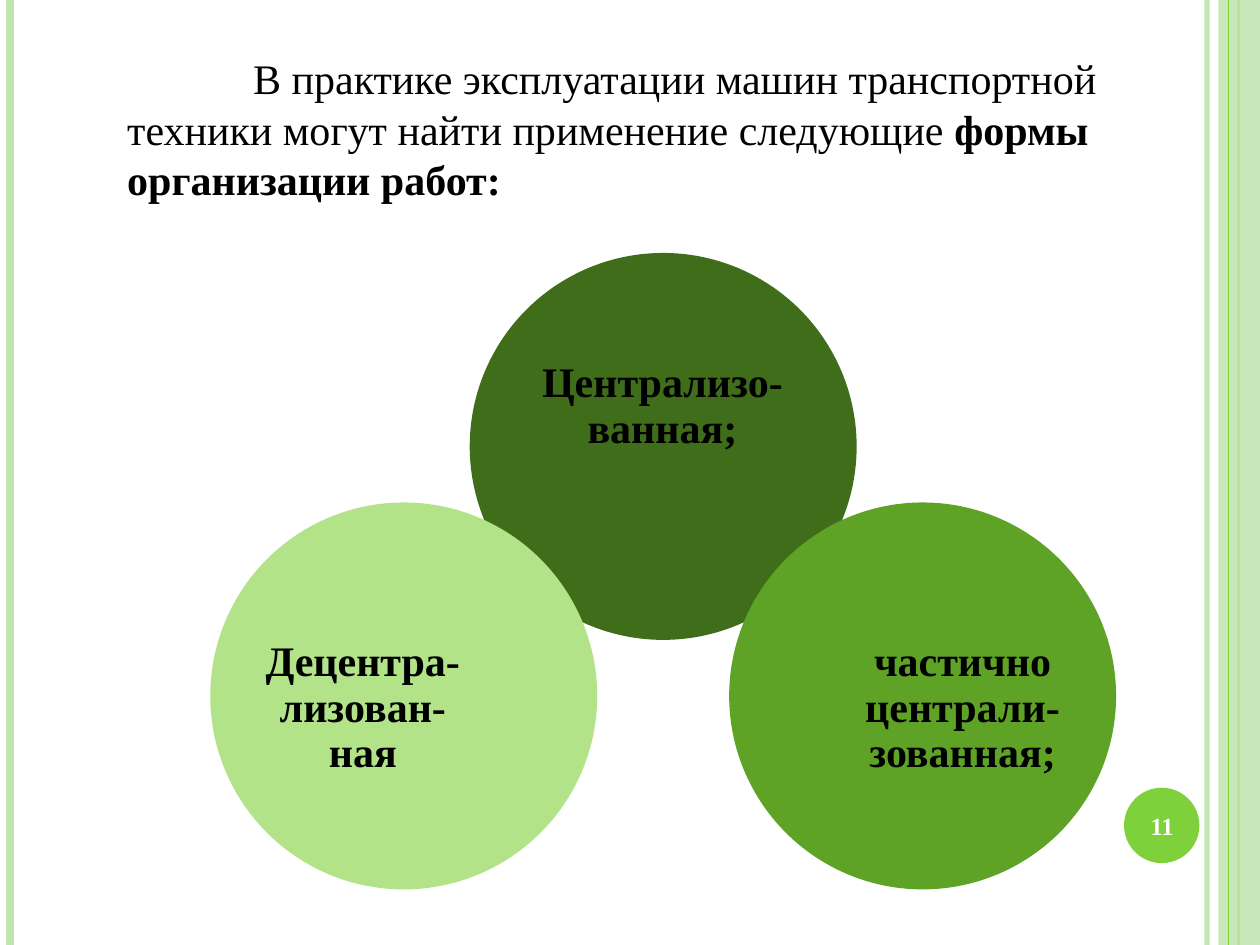
from dataclasses import dataclass

import pptx
import pptx.dml.color
import pptx.enum.shapes
import pptx.enum.text
import pptx.oxml.ns
import pptx.util
from lxml import etree

Cm = pptx.util.Cm
Pt = pptx.util.Pt
RGBColor = pptx.dml.color.RGBColor
MSO_SHAPE = pptx.enum.shapes.MSO_SHAPE
MSO_ANCHOR = pptx.enum.text.MSO_ANCHOR
PP_ALIGN = pptx.enum.text.PP_ALIGN
qn = pptx.oxml.ns.qn

BLACK = RGBColor(0x00, 0x00, 0x00)
WHITE = RGBColor(0xFF, 0xFF, 0xFF)
PALE_GREEN = RGBColor(0xC0, 0xE5, 0xAF)
ACCENT_GREEN = RGBColor(0x7F, 0xD1, 0x3B)
DARK_GREEN = RGBColor(0x3F, 0x6D, 0x19)
MID_GREEN = RGBColor(0x5F, 0xA3, 0x26)
LIGHT_GREEN = RGBColor(0xB2, 0xE3, 0x89)

FONT = "Times New Roman"
SLIDE_WIDTH, SLIDE_HEIGHT = 25.4, 19.05
CIRCLE_SIZE = 7.8


@dataclass
class Stripe:
    x: float
    width: float
    color: RGBColor
    opacity: int = 100


@dataclass
class Box:
    left: float
    top: float
    width: float
    height: float


@dataclass
class WorkForm:
    text: str
    color: RGBColor
    left: float
    top: float
    label: Box


# Stripes beneath and above the translucent right band
LOWER_STRIPES = [
    Stripe(24.33, 3, PALE_GREEN, 93),
    Stripe(0.2, 4.5, PALE_GREEN),
    Stripe(24.97, 1.5, ACCENT_GREEN),
]
UPPER_STRIPE = Stripe(24.76, 0.75, ACCENT_GREEN)

WORK_FORMS = [
    WorkForm("Централизо-ванная;", DARK_GREEN, 9.47, 5.1, Box(10.5, 6.45, 5.71, 3.5)),
    WorkForm("частично централи-зованная;", MID_GREEN, 14.7, 10.13,
             Box(17.07, 12.14, 4.67, 4.29)),
    WorkForm("Децентра-лизован-ная", LIGHT_GREEN, 4.24, 10.13,
             Box(4.98, 12.14, 4.67, 4.29)),
]


def set_opacity(fill_parent, percent: int) -> None:
    color = fill_parent.find(qn("a:solidFill"))[0]
    etree.SubElement(color, qn("a:alpha"), val=str(percent * 1000))


def add_stripe(shapes, stripe: Stripe) -> None:
    connector = shapes.add_connector(
        pptx.enum.shapes.MSO_CONNECTOR.STRAIGHT,
        Cm(stripe.x), Cm(0), Cm(stripe.x), Cm(SLIDE_HEIGHT))
    connector.line.color.rgb = stripe.color
    connector.line.width = Pt(stripe.width)
    properties = connector.element.spPr
    etree.SubElement(properties, qn("a:effectLst"))
    if stripe.opacity < 100:
        set_opacity(properties.find(qn("a:ln")), stripe.opacity)


def add_filled(shapes, kind: MSO_SHAPE, box: Box, color: RGBColor):
    shape = shapes.add_shape(
        kind, Cm(box.left), Cm(box.top), Cm(box.width), Cm(box.height))
    shape.fill.solid()
    shape.fill.fore_color.rgb = color
    shape.line.fill.background()
    shape.shadow.inherit = False
    return shape


def add_label(shapes, box: Box, text: str, size: int, color: RGBColor):
    label = shapes.add_textbox(
        Cm(box.left), Cm(box.top), Cm(box.width), Cm(box.height))
    frame = label.text_frame
    frame.word_wrap = True
    frame.vertical_anchor = MSO_ANCHOR.MIDDLE
    paragraph = frame.paragraphs[0]
    paragraph.text = text
    paragraph.alignment = PP_ALIGN.CENTER
    paragraph.font.name = FONT
    paragraph.font.size = Pt(size)
    paragraph.font.bold = True
    paragraph.font.color.rgb = color
    return label


def add_work_form(shapes, form: WorkForm) -> None:
    circle = Box(form.left, form.top, CIRCLE_SIZE, CIRCLE_SIZE)
    add_filled(shapes, MSO_SHAPE.OVAL, circle, form.color)
    frame = add_label(shapes, form.label, form.text, 24, BLACK).text_frame
    frame.margin_left = frame.margin_right = 0
    frame.margin_top = frame.margin_bottom = 0
    frame.paragraphs[0].line_spacing = 0.9


def fill_body(body) -> None:
    body.left, body.top = Cm(1.55), Cm(0.94)
    body.width, body.height = Cm(21.67), Cm(5.69)
    frame = body.text_frame
    frame.auto_size = pptx.enum.text.MSO_AUTO_SIZE.NONE
    paragraph = frame.paragraphs[0]
    paragraph.space_before = Pt(6)
    paragraph.font.name = FONT
    paragraph.font.size = Pt(24)
    paragraph.font.color.rgb = BLACK
    paragraph.add_run().text = (
        "В практике эксплуатации машин транспортной техники "
        "могут найти применение следующие ")
    forms = paragraph.add_run()
    forms.text = "формы организации работ:"
    forms.font.bold = True
    # Indented first line without a bullet
    properties = paragraph._p.get_or_add_pPr()
    properties.set("marL", str(Cm(0.76)))
    properties.set("indent", str(Cm(2.54)))
    bullet = etree.Element(qn("a:buNone"))
    properties.find(qn("a:spcBef")).addnext(bullet)


def main() -> None:
    presentation = pptx.Presentation()
    presentation.slide_width = Cm(SLIDE_WIDTH)
    presentation.slide_height = Cm(SLIDE_HEIGHT)
    slide = presentation.slides.add_slide(presentation.slide_layouts[1])
    shapes = slide.shapes
    title = shapes.title.element
    title.getparent().remove(title)

    # Side decoration
    for stripe in LOWER_STRIPES:
        add_stripe(shapes, stripe)
    band = add_filled(shapes, MSO_SHAPE.RECTANGLE,
                      Box(24.56, 0, 0.84, SLIDE_HEIGHT), PALE_GREEN)
    set_opacity(band.element.spPr, 87)
    add_stripe(shapes, UPPER_STRIPE)

    # Introduction
    fill_body(slide.placeholders[1])

    # Overlapping circles
    diagram = shapes.add_group_shape()
    for form in WORK_FORMS:
        add_work_form(diagram.shapes, form)

    # Slide number
    add_filled(shapes, MSO_SHAPE.OVAL, Box(22.66, 15.88, 1.52, 1.52), ACCENT_GREEN)
    add_label(shapes, Box(22.58, 15.93, 1.7, 1.45), "11", 14, WHITE)

    presentation.save("out.pptx")


if __name__ == "__main__":
    main()
